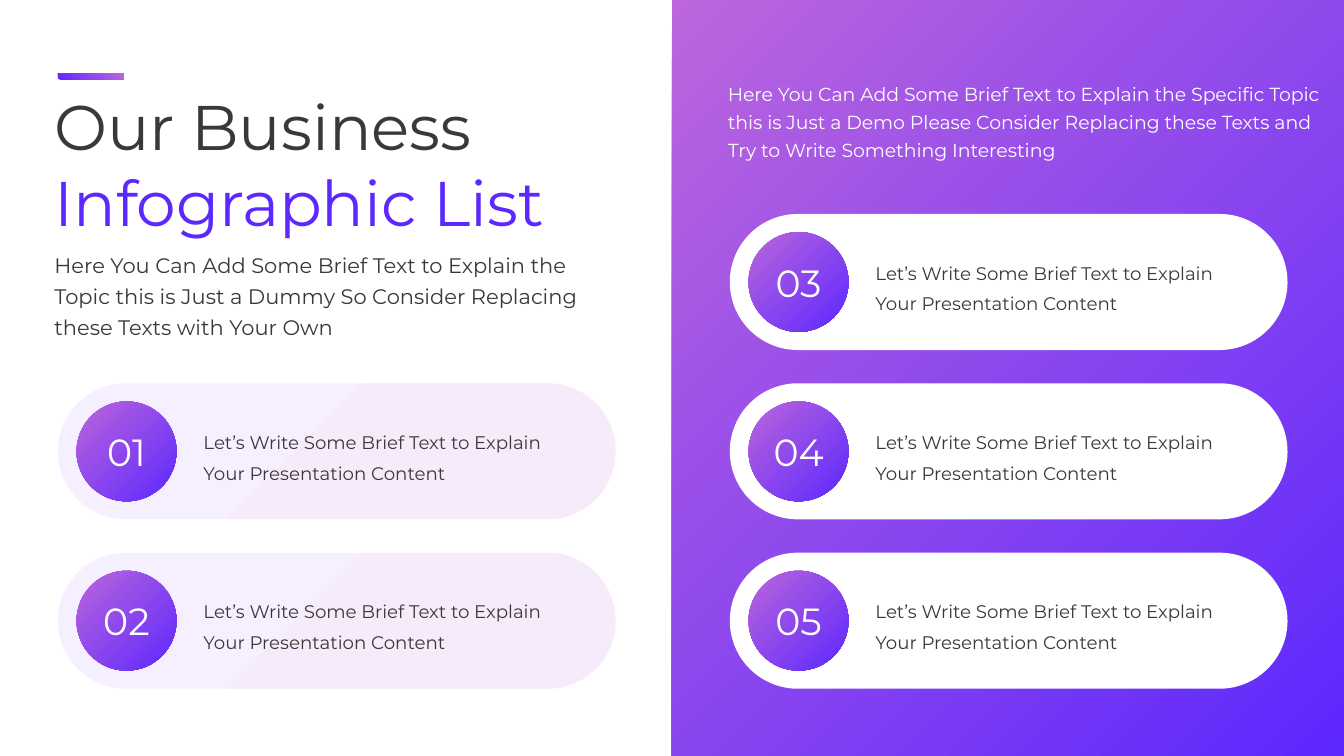
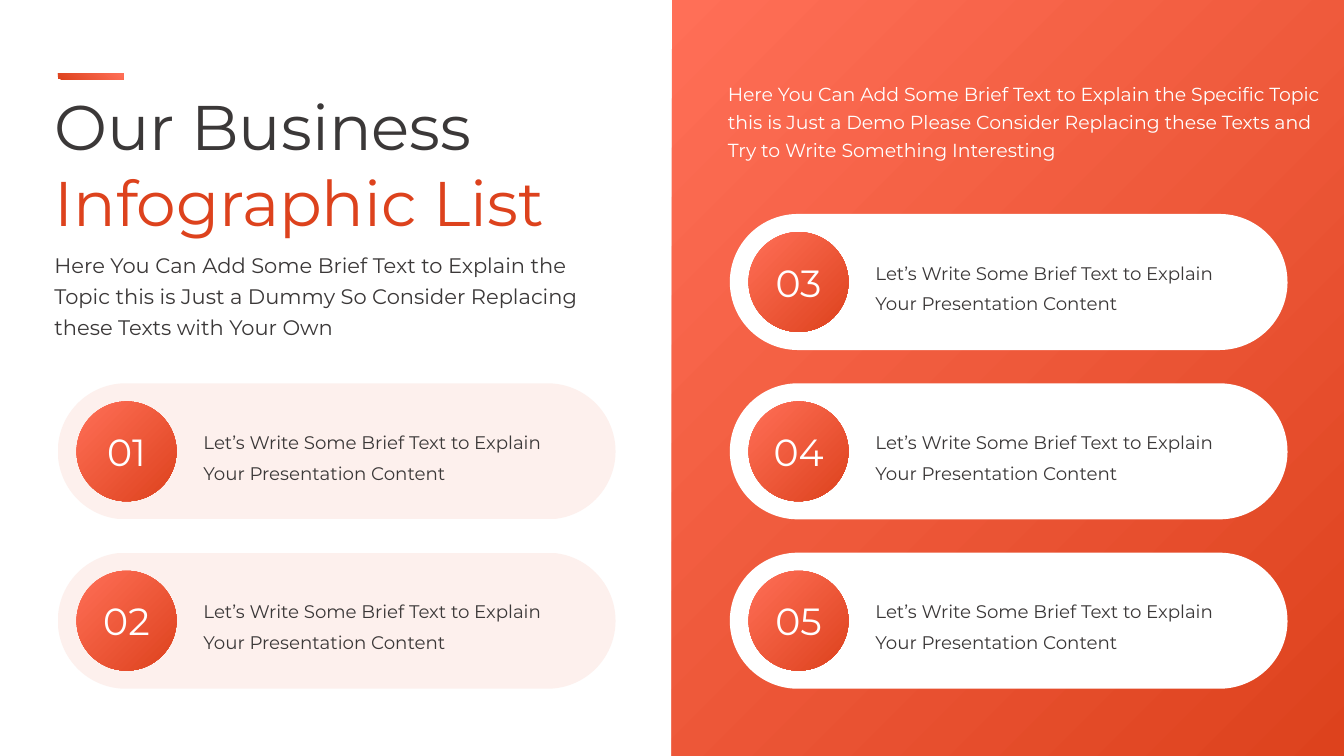
from dataclasses import dataclass

from lxml import etree
from pptx import Presentation, util as u
from pptx.dml.color import RGBColor
from pptx.enum import shapes, text
from pptx.oxml.ns import qn


@dataclass(frozen=True)
class Palette:
    deep: str
    light: str
    pale: tuple


@dataclass(frozen=True)
class Theme:
    font: str = "Montserrat"
    ink: str = "3B3838"
    white: str = "FFFFFF"
    title: float = 45
    number: float = 27
    intro: float = 15
    brief: float = 13.5
    item: float = 13
    palettes: tuple = (
        Palette("5D28FE", "BB66DD", ("F6EBFB", "F6EFFF")),
        Palette("DD421D", "FF6F57", ("FFEDEB", "FDF0ED")),
    )


THEME = Theme()
TITLE = ["Our Business", "Infographic List"]
INTRO = [
    "Here You Can Add Some Brief Text to Explain the",
    "Topic this is Just a Dummy So Consider Replacing",
    "these Texts with Your Own",
]
BRIEF = [
    "Here You Can Add Some Brief Text to Explain the Specific Topic this is "
    "Just a Demo Please Consider Replacing these Texts and Try to Write "
    "Something Interesting"
]
ITEM = ["Let’s Write Some Brief Text to Explain", "Your Presentation Content"]

# Shares of the slide, in percent
LEFT, HALF = 4.3, 50
FIRST_ROW, ROW_STEP = 28.3, 22.4
# Item number: (column, row)
CELLS = {"01": (0, 1), "02": (0, 2), "03": (1, 0), "04": (1, 1), "05": (1, 2)}


def apply(target, values):
    for attribute, value in values.items():
        setattr(target, attribute, value)


def blend(fill, start, end, first=0, angle=None):
    """Two-stop gradient, linear when an angle is given."""
    fill.gradient()
    for stop, position, colour in zip(fill.gradient_stops, (first, 1), (start, end)):
        stop.position = position
        stop.color.rgb = RGBColor.from_string(colour)
    if angle is not None:
        fill.gradient_angle = angle


def spread_from_corner(shape):
    """Turn the gradient of a shape into a radial one centred bottom right."""
    gradient = shape._element.spPr.find(qn("a:gradFill"))
    gradient.remove(gradient.find(qn("a:lin")))
    radial = etree.SubElement(gradient, qn("a:path"), path="circle")
    etree.SubElement(radial, qn("a:fillToRect"), l="100000", t="100000")


class Deck:
    def __init__(self, theme):
        self.theme = theme
        self.show = Presentation()
        apply(self.show, {"slide_width": u.Inches(13.33), "slide_height": u.Inches(7.5)})

    def start_slide(self, palette):
        self.palette = palette
        self.slide = self.show.slides.add_slide(self.show.slide_layouts[3])

    def place(self, left, top, width, height):
        across, down = self.show.slide_width / 100, self.show.slide_height / 100
        return [int(n) for n in (left * across, top * down, width * across, height * down)]

    def shape(self, kind, box, colours, **gradient):
        """One colour fills solid, two blend."""
        shape = self.slide.shapes.add_shape(kind, *self.place(*box))
        shape.shadow.inherit = False
        shape.line.fill.background()
        if len(colours) == 1:
            shape.fill.solid()
            shape.fill.fore_color.rgb = RGBColor.from_string(colours[0])
        else:
            blend(shape.fill, *colours, **gradient)
            if "angle" not in gradient:
                spread_from_corner(shape)
        return shape

    def set_text(self, holder, lines, size, colour, spacing=None, **frame_format):
        frame = holder.text_frame
        apply(frame, {"word_wrap": True, "auto_size": text.MSO_AUTO_SIZE.NONE,
                      "vertical_anchor": text.MSO_ANCHOR.TOP, **frame_format})
        frame.text = "\n".join(lines)
        centred = frame.vertical_anchor == text.MSO_ANCHOR.MIDDLE
        for paragraph in frame.paragraphs:
            apply(paragraph, {
                "alignment": text.PP_ALIGN.CENTER if centred else text.PP_ALIGN.LEFT,
                "space_before": u.Pt(0),
                "line_spacing": u.Pt(spacing) if spacing else 1.0,
            })
            font = paragraph.runs[0].font
            apply(font, {"name": self.theme.font, "size": u.Pt(size)})
            font.color.rgb = RGBColor.from_string(colour)

    def title(self, box):
        title = self.slide.shapes.title
        apply(title, dict(zip(("left", "top", "width", "height"), self.place(*box))))
        self.set_text(title, TITLE, self.theme.title, self.theme.ink)
        accent = title.text_frame.paragraphs[1].runs[0].font
        blend(accent.fill, self.palette.deep, self.palette.light, angle=180)

    def body(self, index, box, lines, size, colour, spacing):
        body = self.slide.placeholders[index]
        apply(body, dict(zip(("left", "top", "width", "height"), self.place(*box))))
        self.set_text(body, lines, size, colour, spacing)
        for paragraph in body.text_frame.paragraphs:
            properties = paragraph._p.get_or_add_pPr()
            properties.set("marL", "0")
            properties.set("indent", "0")
            etree.SubElement(properties, qn("a:buNone"))

    def panel(self):
        panel = self.shape(shapes.MSO_SHAPE.RECTANGLE, (HALF, 0, HALF, 100),
                           (self.palette.deep, self.palette.light))
        self.slide.shapes._spTree.insert(2, panel._element)

    def accent_bar(self):
        self.shape(shapes.MSO_SHAPE.RECTANGLE, (LEFT, 9.7, 4.9, 0.8),
                   (self.palette.deep, self.palette.light), angle=45)

    def item(self, number, column, row):
        left, top = LEFT + column * HALF, FIRST_ROW + row * ROW_STEP
        colours = (self.theme.white,) if column else self.palette.pale
        gradient = {} if column else {"first": 0.12}
        pill = self.shape(shapes.MSO_SHAPE.ROUNDED_RECTANGLE, (left, top, 41.5, 18),
                          colours, **gradient)
        pill.adjustments[0] = 0.5
        badge = self.shape(shapes.MSO_SHAPE.OVAL, (left + 1.4, top + 2.4, 7.43, 13.2),
                           (self.palette.deep, self.palette.light))
        self.set_text(badge, [number], self.theme.number, self.theme.white,
                      word_wrap=False, vertical_anchor=text.MSO_ANCHOR.MIDDLE,
                      margin_left=0, margin_right=0)
        label = self.slide.shapes.add_textbox(
            *self.place(left + 10.1, top + 4.5, 27.3, 9.2))
        self.set_text(label, ITEM, self.theme.item, self.theme.ink, 22)


def main():
    deck = Deck(THEME)
    for palette in THEME.palettes:
        deck.start_slide(palette)
        deck.panel()
        deck.accent_bar()
        deck.title((3.3, 10.9, 41.25, 21.6))
        deck.body(1, (3.3, 32, 41.25, 13.3), INTRO, THEME.intro, THEME.ink, 22)
        deck.body(2, (53.4, 9.6, 45.9, 12.3), BRIEF, THEME.brief, THEME.white, 20)
        for number, (column, row) in CELLS.items():
            deck.item(number, column, row)
    deck.show.save("out.pptx")


if __name__ == "__main__":
    main()
